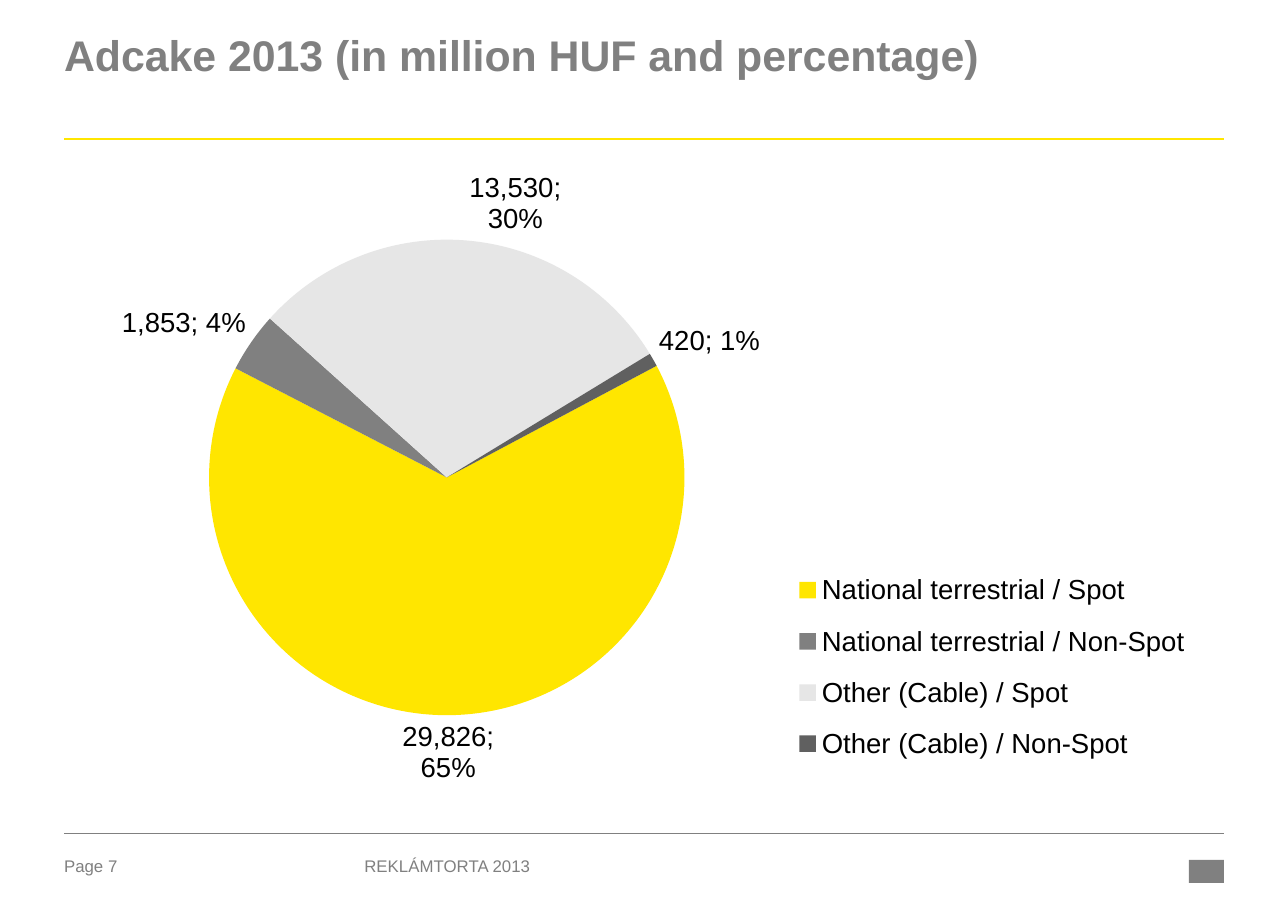
from pptx import Presentation, util as u
from pptx.chart import data as chart_data
from pptx.dml import color
from pptx.enum import chart as chart_enum, shapes, text
from pptx.oxml import parse_xml
from pptx.oxml.ns import nsdecls

PX = 914400 / 110
YELLOW = color.RGBColor(0xFF, 0xE6, 0x00)
GRAY = color.RGBColor(0x80, 0x80, 0x80)
LIGHT = color.RGBColor(0xE6, 0xE6, 0xE6)
DARK = color.RGBColor(0x60, 0x60, 0x60)
BLACK = color.RGBColor(0, 0, 0)
FONT = "Arial"
LEFT, WIDTH = 64, 1159

SLICES = [
    ("National terrestrial / Spot", 29826, YELLOW, ";\n"),
    ("National terrestrial / Non-Spot", 1853, GRAY, "; "),
    ("Other (Cable) / Spot", 13530, LIGHT, ";\n"),
    ("Other (Cable) / Non-Spot", 420, DARK, "; "),
]


def emu(*lengths):
    return [u.Emu(round(length * PX)) for length in lengths]


def style_font(font, size, shade, bold=False):
    font.name = FONT
    font.size = u.Pt(size)
    font.bold = bold
    font.color.rgb = shade


def write(shape, words, size, bold=False):
    frame = shape.text_frame
    frame.text = words
    frame.word_wrap = True
    frame.auto_size = text.MSO_AUTO_SIZE.NONE
    frame.vertical_anchor = text.MSO_ANCHOR.TOP
    frame.margin_left = frame.margin_right = 0
    frame.margin_top = frame.margin_bottom = 0
    para = frame.paragraphs[0]
    para.alignment = text.PP_ALIGN.LEFT
    for span in para.runs:
        style_font(span.font, size, GRAY, bold)
    return para


def add_title(page, words):
    title = page.shapes.title
    title.left, title.top, title.width, title.height = emu(LEFT, 37, WIDTH, 103)
    write(title, words, 28, bold=True).line_spacing = 0.85


def add_label(page, words, left, width):
    write(page.shapes.add_textbox(*emu(left, 855, width, 26)), words, 11)


def add_rule(page, top, shade, weight):
    rule = page.shapes.add_connector(
        shapes.MSO_CONNECTOR.STRAIGHT, *emu(LEFT, top, LEFT + WIDTH, top))
    rule.line.color.rgb = shade
    rule.line.width = u.Pt(weight)
    rule._element.spPr.append(parse_xml(f"<a:effectLst {nsdecls('a')}/>"))


def add_mark(page):
    mark = page.shapes.add_shape(
        shapes.MSO_SHAPE.RECTANGLE, *emu(1188, 859, 35, 23))
    mark.shadow.inherit = False
    mark.fill.solid()
    mark.fill.fore_color.rgb = GRAY
    mark.line.fill.background()


def place(part, index, target, x, y, w, h):
    for old in part.xpath("c:layout"):
        part.remove(old)
    inner = f'<c:layoutTarget val="{target}"/>' if target else ""
    part.insert(index, parse_xml(
        f'<c:layout {nsdecls("c")}><c:manualLayout>{inner}'
        f'<c:xMode val="edge"/><c:yMode val="edge"/>'
        f'<c:x val="{x}"/><c:y val="{y}"/><c:w val="{w}"/><c:h val="{h}"/>'
        f'</c:manualLayout></c:layout>'))


def label_slice(point, separator):
    label = point.data_label
    style_font(label.font, 18, BLACK)
    label.position = chart_enum.XL_LABEL_POSITION.OUTSIDE_END
    entry = point.data_label._dLbl
    for name, shown in (("showVal", 1), ("showPercent", 1),
                        ("showCatName", 0), ("showLegendKey", 0)):
        for flag in entry.xpath(f"c:{name}"):
            flag.set("val", str(shown))
    entry.xpath("c:showBubbleSize")[0].addnext(parse_xml(
        f"<c:separator {nsdecls('c')}>{separator}</c:separator>"))


def add_pie(page):
    values = chart_data.CategoryChartData(number_format="#,##0")
    values.categories = [name for name, *_ in SLICES]
    values.add_series("Series 1", [value for _, value, *_ in SLICES])
    frame = page.shapes.add_chart(
        chart_enum.XL_CHART_TYPE.PIE, *emu(LEFT, 156, WIDTH, 642), values)
    chart = frame.chart
    chart.has_title = False
    style_font(chart.font, 18, BLACK)
    chart.has_legend = True
    chart.legend.position = chart_enum.XL_LEGEND_POSITION.RIGHT
    chart.legend.include_in_layout = False

    plot = chart.plots[0]
    plot.vary_by_categories = True
    series = plot.series[0]
    series.data_labels.show_value = True
    series.data_labels.show_percentage = True
    for index, (_, _, shade, separator) in enumerate(SLICES):
        point = series.points[index]
        point.format.fill.solid()
        point.format.fill.fore_color.rgb = shade
        label_slice(point, separator)

    root = chart.element
    pie = root.xpath(".//c:pieChart")[0]
    for old in pie.xpath("c:firstSliceAng"):
        pie.remove(old)
    pie.append(parse_xml(f'<c:firstSliceAng {nsdecls("c")} val="62"/>'))
    place(root.xpath(".//c:plotArea")[0], 0, "inner", 0.12, 0.13, 0.42, 0.74)
    place(root.xpath(".//c:legend")[0], 1, None, 0.62, 0.62, 0.36, 0.35)


def main():
    deck = Presentation()
    deck.slide_width, deck.slide_height = emu(1287, 913)
    page = deck.slides.add_slide(deck.slide_layouts[5])
    add_label(page, "Page 7", LEFT, 94)
    add_mark(page)
    add_rule(page, 139, YELLOW, 1.5)
    add_rule(page, 832, GRAY, 0.25)
    add_title(page, "Adcake 2013 (in million HUF and percentage)")
    add_label(page, "REKLÁMTORTA 2013", 364, 483)
    add_pie(page)
    deck.save("out.pptx")


if __name__ == "__main__":
    main()
